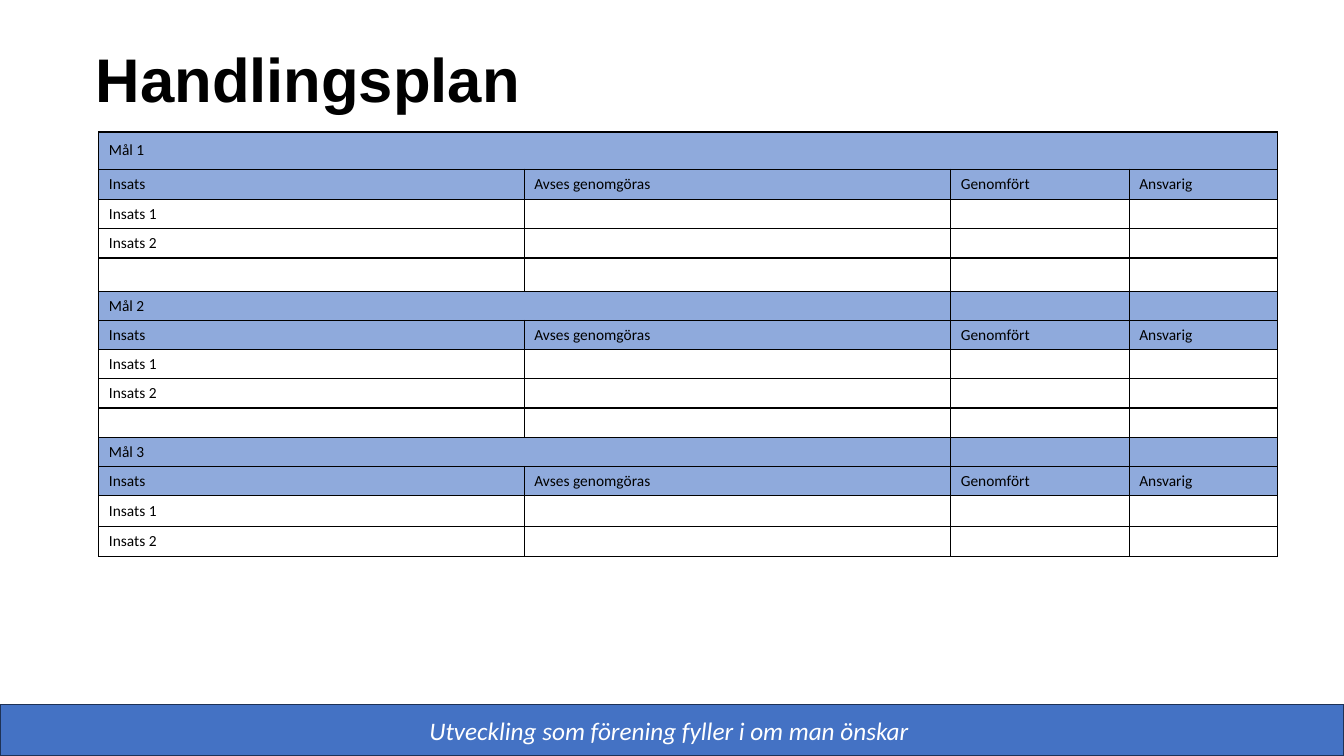
from pptx import Presentation
from pptx.dml.color import RGBColor
from pptx.enum.shapes import MSO_SHAPE
from pptx.enum.text import MSO_ANCHOR, MSO_AUTO_SIZE, PP_ALIGN
from pptx.oxml.ns import qn
from pptx.util import Inches, Pt
from lxml import etree

RECTANGLE = MSO_SHAPE.RECTANGLE
MIDDLE = MSO_ANCHOR.MIDDLE
NO_AUTOFIT = MSO_AUTO_SIZE.NONE
LEFT, CENTER = PP_ALIGN.LEFT, PP_ALIGN.CENTER

TITLE_ONLY = 5
BLACK, WHITE = "000000", "FFFFFF"
HEADER_BLUE, FOOTER_BLUE, FOOTER_EDGE = "8FAADC", "4472C4", "1E3256"

COLUMN_WIDTHS = [4.22, 4.23, 1.77, 1.47]
ROW_HEIGHT = 0.29
SPECIAL_ROW_HEIGHTS = {0: 0.37, 1: 0.3, 4: 0.33, 12: 0.31}
HEADINGS = ["Insats", "Avses genomgöras", "Genomfört", "Ansvarig"]
# Each goal: name, number of merged columns, rows below the headings
GOALS = [
    ("Mål 1", 4, ["Insats 1", "Insats 2", ""]),
    ("Mål 2", 2, ["Insats 1", "Insats 2", ""]),
    ("Mål 3", 2, ["Insats 1", "Insats 2"]),
]


def color(hex_string):
    return RGBColor.from_string(hex_string)


def format_font(font, name, size, hex_color):
    font.name = name
    font.size = Pt(size)
    font.color.rgb = color(hex_color)


def add_title(slide, left, top, width, height):
    title = slide.shapes.title
    title.left, title.top = Inches(left), Inches(top)
    title.width, title.height = Inches(width), Inches(height)
    frame = title.text_frame
    frame.text = "Handlingsplan"
    frame.auto_size = NO_AUTOFIT
    frame.vertical_anchor = MIDDLE
    paragraph = frame.paragraphs[0]
    paragraph.alignment = LEFT
    paragraph.line_spacing = 0.9
    format_font(paragraph.font, "Arial", 44, BLACK)
    paragraph.font.bold = True


def add_borders(cell):
    properties = cell._tc.get_or_add_tcPr()
    for side in ("a:lnL", "a:lnR", "a:lnT", "a:lnB"):
        line = etree.SubElement(properties, qn(side), w=str(Pt(1)))
        fill = etree.SubElement(line, qn("a:solidFill"))
        etree.SubElement(fill, qn("a:srgbClr"), val=BLACK)


def format_cell(cell, text, fill):
    add_borders(cell)
    cell.fill.solid()
    cell.fill.fore_color.rgb = color(fill)
    cell.vertical_anchor = MIDDLE
    paragraph = cell.text_frame.paragraphs[0]
    if text:
        paragraph.text = text
    format_font(paragraph.font, "Calibri", 11, BLACK)
    if not text:
        # Empty cells need a small end mark to keep the row low
        etree.SubElement(paragraph._p, qn("a:endParaRPr"), sz="1100")


def plan_rows():
    """Return (texts, fill, merged columns) for every table row."""
    rows = []
    for name, merged, activities in GOALS:
        rows.append(([name, "", "", ""], HEADER_BLUE, merged))
        rows.append((HEADINGS, HEADER_BLUE, 1))
        rows += [([activity, "", "", ""], WHITE, 1) for activity in activities]
    return rows


def add_plan_table(slide, left, top):
    rows = plan_rows()
    heights = [SPECIAL_ROW_HEIGHTS.get(i, ROW_HEIGHT) for i in range(len(rows))]
    table = slide.shapes.add_table(
        len(rows), len(COLUMN_WIDTHS), Inches(left), Inches(top),
        Inches(sum(COLUMN_WIDTHS)), Inches(sum(heights))).table
    for column, width in zip(table.columns, COLUMN_WIDTHS):
        column.width = Inches(width)
    for i, (texts, fill, merged) in enumerate(rows):
        table.rows[i].height = Inches(heights[i])
        for j, text in enumerate(texts):
            format_cell(table.cell(i, j), text, fill)
        if merged > 1:
            table.cell(i, 0).merge(table.cell(i, merged - 1))


def add_footer(slide, left, top, width, height):
    bar = slide.shapes.add_shape(
        RECTANGLE, Inches(left), Inches(top), Inches(width), Inches(height))
    bar.shadow.inherit = False
    bar.fill.solid()
    bar.fill.fore_color.rgb = color(FOOTER_BLUE)
    bar.line.color.rgb = color(FOOTER_EDGE)
    bar.line.width = Pt(1)
    bar.text_frame.vertical_anchor = MIDDLE
    paragraph = bar.text_frame.paragraphs[0]
    paragraph.text = "Utveckling som förening fyller i om man önskar "
    paragraph.alignment = CENTER
    format_font(paragraph.font, "Calibri", 18, WHITE)
    paragraph.font.italic = True


def main():
    presentation = Presentation()
    presentation.slide_width = Inches(13.33)
    presentation.slide_height = Inches(7.5)
    slide = presentation.slides.add_slide(presentation.slide_layouts[TITLE_ONLY])
    add_title(slide, 0.85, 0.09, 11.5, 1.45)
    add_plan_table(slide, 0.98, 1.31)
    add_footer(slide, 0, 6.99, 13.33, 0.51)
    presentation.save("out.pptx")


if __name__ == "__main__":
    main()
